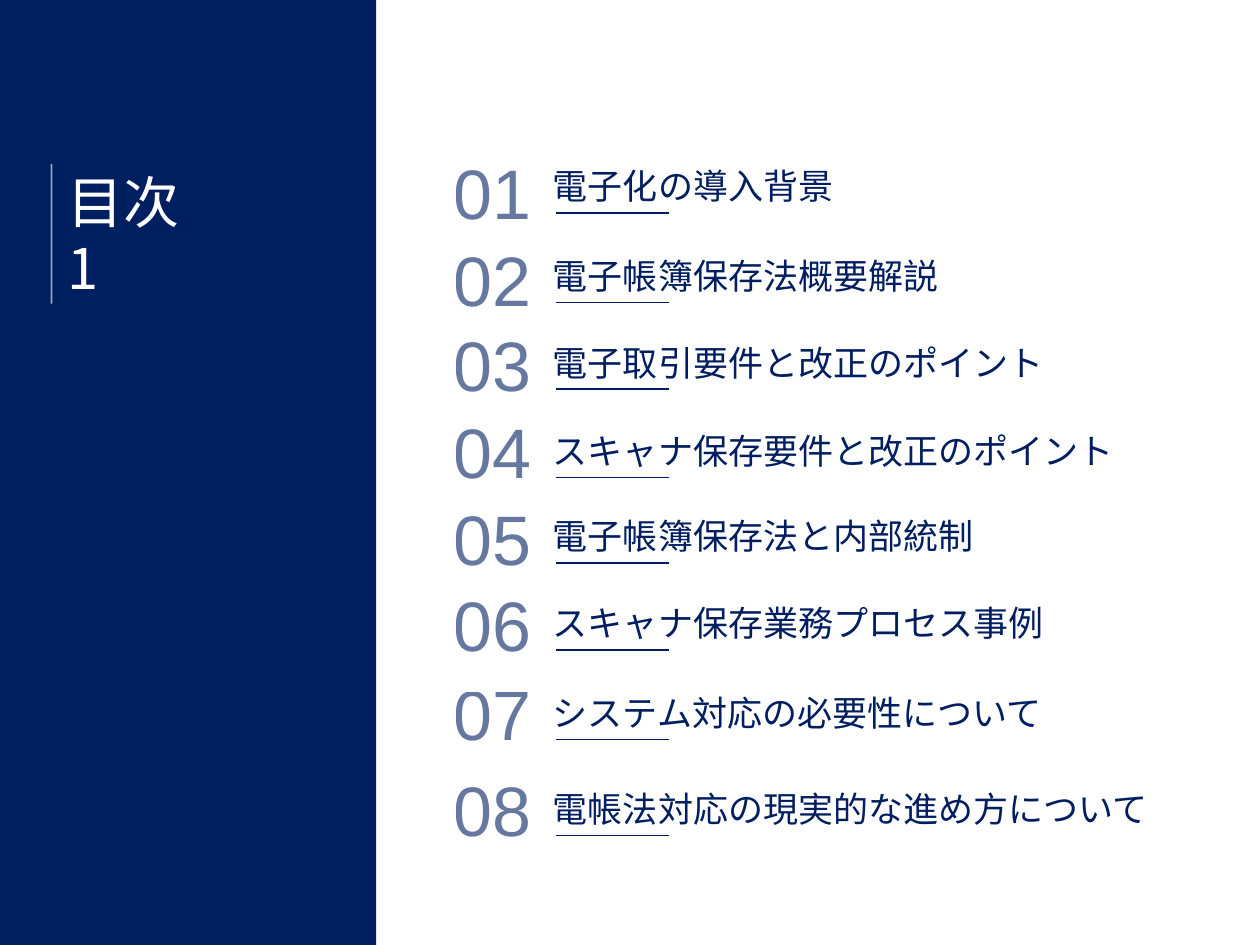
from lxml import etree
from pptx import Presentation
from pptx import util as u
from pptx.dml.color import RGBColor
from pptx.enum import shapes, text
from pptx.oxml import ns

COLORS = {"panel": "001F60", "navy": "001E60", "white": "FFFFFF"}
FONTS = {"number": "Arial", "japanese": "Noto Sans CJK JP"}

# Agenda text, height of its rule, top of its number box
AGENDA = [
    ("電子化の導入背景", 121.7, 60.5),
    ("電子帳簿保存法概要解説", 172.8, 110.2),
    ("電子取引要件と改正のポイント", 222.5, 159.1),
    ("スキャナ保存要件と改正のポイント", 272.9, 208.8),
    ("電子帳簿保存法と内部統制", 321.8, 258.5),
    ("スキャナ保存業務プロセス事例", 371.5, 307.4),
    ("システム対応の必要性について", 422.6, 358.6),
    ("電帳法対応の現実的な進め方について", 477.4, 413.3),
]
ROW_HEIGHT = 76.3


def paint(fill, color, opacity=100):
    """Make a fill solid, with opacity in percent."""
    fill.solid()
    fill.fore_color.rgb = RGBColor.from_string(COLORS[color])
    if opacity < 100:
        for element in fill._xPr.iter(ns.qn("a:srgbClr")):
            alpha = etree.SubElement(element, ns.qn("a:alpha"))
            alpha.set("val", str(opacity * 1000))


def write(paragraph, content, *, size, font, color, opacity=100,
          line_spacing=None, space_before=0):
    paragraph.line_spacing = line_spacing
    paragraph.space_before = u.Pt(space_before)
    run = paragraph.add_run()
    run.text = content
    run.font.size = u.Pt(size)
    paint(run.font.fill, color, opacity)
    run.font.name = FONTS[font]
    east_asian = etree.SubElement(run.font._element, ns.qn("a:ea"))
    east_asian.set("typeface", FONTS[font])


class SlideBuilder:
    def __init__(self, slide):
        self.slide = slide

    def panel(self, left, top, width, height, color):
        shape = self.slide.shapes.add_shape(
            shapes.MSO_SHAPE.RECTANGLE,
            u.Pt(left), u.Pt(top), u.Pt(width), u.Pt(height))
        shape.shadow.inherit = False
        paint(shape.fill, color)
        shape.line.fill.background()

    def line(self, x1, y1, x2, y2, color, opacity=100):
        connector = self.slide.shapes.add_connector(
            shapes.MSO_CONNECTOR.STRAIGHT,
            u.Pt(x1), u.Pt(y1), u.Pt(x2), u.Pt(y2))
        connector.line.width = u.Pt(1)
        paint(connector.line.fill, color, opacity)
        etree.SubElement(connector._element.spPr, ns.qn("a:effectLst"))

    def text_box(self, left, top, width, height, paragraphs,
                 anchor=text.MSO_ANCHOR.BOTTOM, space_between=0, **style):
        box = self.slide.shapes.add_textbox(
            u.Pt(left), u.Pt(top), u.Pt(width), u.Pt(height))
        frame = box.text_frame
        frame.word_wrap = True
        frame.vertical_anchor = anchor
        for index, content in enumerate(paragraphs):
            paragraph = frame.add_paragraph() if index else frame.paragraphs[0]
            write(paragraph, content,
                  space_before=space_between if index else 0, **style)


def main():
    presentation = Presentation()
    presentation.slide_width = u.Pt(720)
    presentation.slide_height = u.Pt(540)
    builder = SlideBuilder(
        presentation.slides.add_slide(presentation.slide_layouts[6]))

    builder.panel(0, 0, 215, 540, "panel")
    builder.line(29.5, 93.6, 29.5, 173.5, "white", opacity=60)
    builder.text_box(31.7, 96.5, 131, 92.2, ["目次", "1"],
                     anchor=text.MSO_ANCHOR.TOP, space_between=3,
                     line_spacing=0.9, size=32, font="japanese", color="white")

    for number, (label, rule_y, number_top) in enumerate(AGENDA, start=1):
        builder.line(317.5, rule_y, 382.3, rule_y, "navy")
        builder.text_box(308.9, rule_y - ROW_HEIGHT, 388.8, ROW_HEIGHT,
                         [label], size=20, font="japanese", color="navy")
        builder.text_box(252, number_top, 92.2, ROW_HEIGHT, [f"{number:02}"],
                         size=40, font="number", color="navy", opacity=60)

    presentation.save("out.pptx")


if __name__ == "__main__":
    main()
